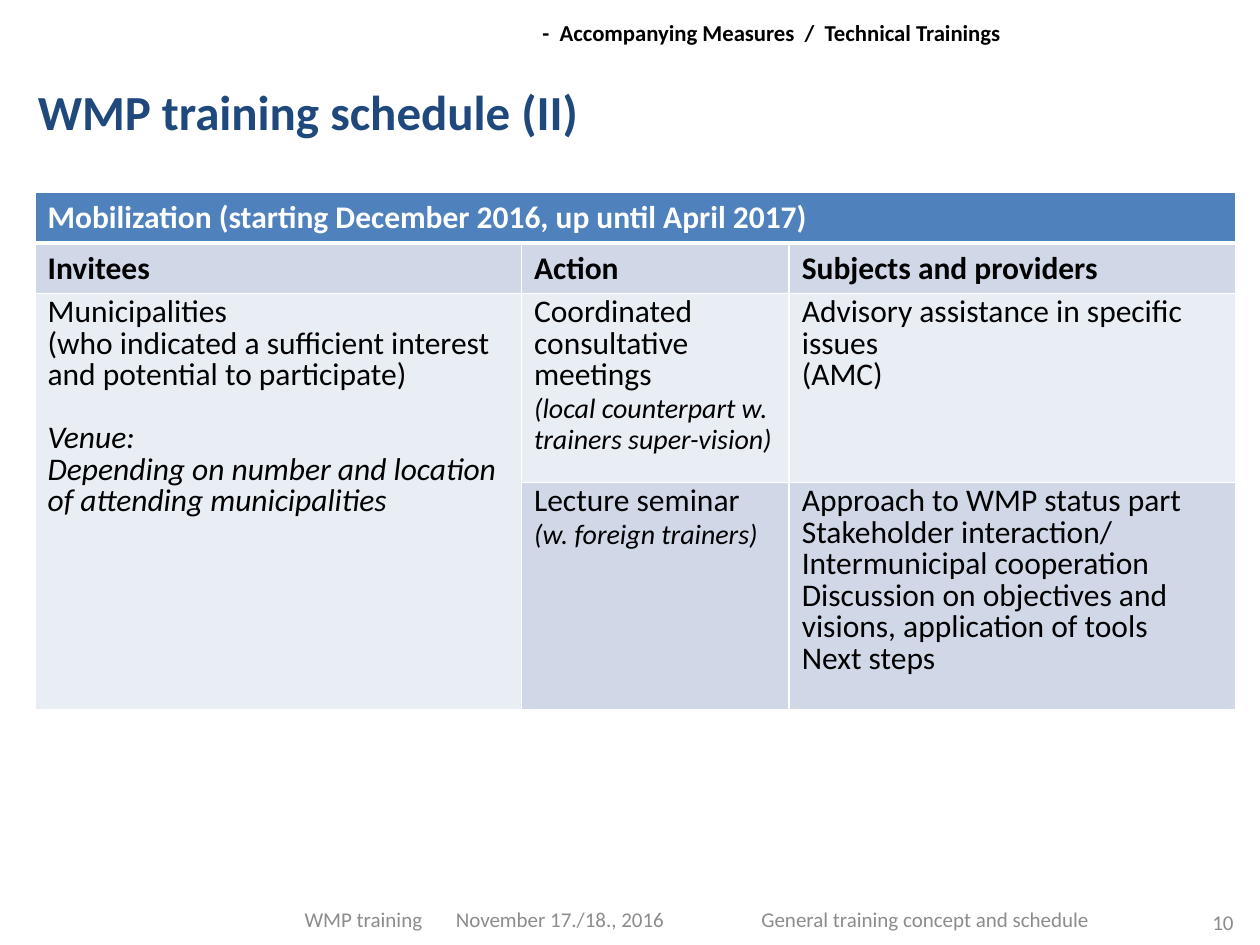
import pptx
import pptx.dml.color
import pptx.enum.shapes
import pptx.enum.text
import pptx.oxml
import pptx.oxml.ns
import pptx.util

Pt = pptx.util.Pt
RGBColor = pptx.dml.color.RGBColor
Align = pptx.enum.text.PP_ALIGN
Anchor = pptx.enum.text.MSO_ANCHOR

WHITE = RGBColor(0xFF, 0xFF, 0xFF)
BLACK = RGBColor(0x00, 0x00, 0x00)
GREY = RGBColor(0x8C, 0x8C, 0x8C)
NAVY = RGBColor(0x1F, 0x49, 0x7D)
BLUE = RGBColor(0x4F, 0x81, 0xBD)
BAND_DARK = RGBColor(0xD0, 0xD8, 0xE8)
BAND_LIGHT = RGBColor(0xE9, 0xED, 0xF4)

COLUMN_WIDTHS = (278, 153, 255)
ROW_HEIGHTS = (27.4, 27.4, 108, 130)
HEADINGS = ("Invitees", "Action", "Subjects and providers")


class SlideBuilder:
    font = "Calibri"
    body_size = 18
    line_pitch = Pt(18)

    def __init__(self, slide):
        self.slide = slide

    def add_run(self, paragraph, text, size, color=BLACK, bold=False, italic=False):
        """Add text as one run per line, with line breaks between."""
        for number, line in enumerate(text.split("\n")):
            if number:
                paragraph.add_line_break()
            run = paragraph.add_run()
            run.text = line
            run.font.name = self.font
            run.font.size = Pt(size)
            run.font.bold = bold
            run.font.italic = italic
            run.font.color.rgb = color

    def title(self, text, left, top, width, height):
        heading = self.slide.shapes.title
        heading.left, heading.top = Pt(left), Pt(top)
        heading.width, heading.height = Pt(width), Pt(height)
        frame = heading.text_frame
        frame.auto_size = pptx.enum.text.MSO_AUTO_SIZE.NONE
        frame.vertical_anchor = Anchor.TOP
        frame.paragraphs[0].alignment = Align.LEFT
        self.add_run(frame.paragraphs[0], text, 28, NAVY, bold=True)

    def banner(self, text, left, top, width, height):
        strip = self.slide.shapes.add_shape(
            pptx.enum.shapes.MSO_SHAPE.RECTANGLE,
            Pt(left), Pt(top), Pt(width), Pt(height))
        strip.shadow.inherit = False
        strip.fill.solid()
        strip.fill.fore_color.rgb = WHITE
        strip.line.fill.background()
        frame = strip.text_frame
        frame.word_wrap = True
        frame.vertical_anchor = Anchor.TOP
        frame.margin_left = Pt(6)
        frame.margin_right = frame.margin_top = frame.margin_bottom = Pt(3)
        frame.paragraphs[0].alignment = Align.LEFT
        self.add_run(frame.paragraphs[0], text, 13, bold=True)

    def footer(self, text, left, top, width, align=Align.LEFT, tab=None):
        box = self.slide.shapes.add_textbox(Pt(left), Pt(top), Pt(width), Pt(28.8))
        frame = box.text_frame
        frame.word_wrap = True
        frame.vertical_anchor = Anchor.MIDDLE
        paragraph = frame.paragraphs[0]
        paragraph.alignment = align
        if tab:
            paragraph._p.get_or_add_pPr().append(pptx.oxml.parse_xml(
                f'<a:tabLst {pptx.oxml.ns.nsdecls("a")}>'
                f'<a:tab pos="{int(Pt(tab))}" algn="l"/></a:tabLst>'))
        self.add_run(paragraph, text, 12, GREY)

    def table(self, left, top, widths, heights):
        grid = self.slide.shapes.add_table(
            len(heights), len(widths), Pt(left), Pt(top),
            Pt(sum(widths)), Pt(sum(heights))).table
        for column, width in zip(grid.columns, widths):
            column.width = Pt(width)
        for row, height in zip(grid.rows, heights):
            row.height = Pt(height)
        return grid

    def cell_style(self, cell, fill, top=1, bottom=1):
        properties = cell._tc.get_or_add_tcPr()
        for side, weight in (("L", 1), ("R", 1), ("T", top), ("B", bottom)):
            properties.append(pptx.oxml.parse_xml(
                f'<a:ln{side} {pptx.oxml.ns.nsdecls("a")} w="{int(Pt(weight))}">'
                f'<a:solidFill><a:srgbClr val="{WHITE}"/></a:solidFill></a:ln{side}>'))
        cell.fill.solid()
        cell.fill.fore_color.rgb = fill

    def heading_cell(self, cell, text, color=BLACK):
        self.add_run(cell.text_frame.paragraphs[0], text, self.body_size, color, bold=True)

    def body_cell(self, cell, *paragraphs, gap_before=None):
        """Fill a cell; a paragraph is a list of (text, size, italic) runs.

        gap_before is the number of the paragraph that follows one line of space.
        """
        frame = cell.text_frame
        for number, runs in enumerate(paragraphs):
            paragraph = frame.add_paragraph() if number else frame.paragraphs[0]
            paragraph.line_spacing = self.line_pitch
            if number and number == gap_before:
                paragraph.space_before = self.line_pitch
            for text, size, italic in runs:
                self.add_run(paragraph, text, size, italic=italic)


def plain(text):
    return (text, 18, False)


def aside(text, size=16):
    return (text, size, True)


def add_schedule(builder):
    schedule = builder.table(20, 110, COLUMN_WIDTHS, ROW_HEIGHTS)
    row_fills = (BLUE, BAND_DARK, BAND_LIGHT, BAND_DARK)
    for row, fill in enumerate(row_fills):
        for column in range(len(COLUMN_WIDTHS)):
            in_invitees = column == 0 and row > 1
            builder.cell_style(schedule.cell(row, column),
                               BAND_LIGHT if in_invitees else fill,
                               top=3 if row == 1 else 1,
                               bottom=3 if row == 0 else 1)
    schedule.cell(0, 0).merge(schedule.cell(0, 2))
    schedule.cell(2, 0).merge(schedule.cell(3, 0))

    builder.heading_cell(schedule.cell(0, 0),
                         "Mobilization (starting December 2016, up until April 2017)", WHITE)
    for column, heading in enumerate(HEADINGS):
        builder.heading_cell(schedule.cell(1, column), heading)

    builder.body_cell(
        schedule.cell(2, 0),
        [plain("Municipalities\n(who indicated a sufficient interest and potential to participate)")],
        [aside("Venue:\nDepending on number and location of attending municipalities", 18)],
        gap_before=1)
    builder.body_cell(
        schedule.cell(2, 1),
        [plain("Coordinated consultative meetings\n"),
         aside("(local counterpart w. trainers super-vision)")])
    builder.body_cell(
        schedule.cell(2, 2),
        [plain("Advisory assistance in specific issues")],
        [plain("(AMC)")])
    builder.body_cell(
        schedule.cell(3, 1),
        [plain("Lecture seminar")],
        [aside("(w. foreign trainers)")])
    builder.body_cell(
        schedule.cell(3, 2),
        [plain("Approach to WMP status part")],
        [plain("Stakeholder interaction/")],
        [plain("Intermunicipal cooperation")],
        [plain("Discussion on objectives and visions, application of tools")],
        [plain("Next steps")])


def main():
    presentation = pptx.Presentation()
    presentation.slide_width, presentation.slide_height = Pt(720), Pt(540)
    title_only = presentation.slide_layouts[5]
    builder = SlideBuilder(presentation.slides.add_slide(title_only))

    builder.banner("-  Accompanying Measures  /  Technical Trainings", 304, 8, 286.5, 22)
    builder.footer("General training concept and schedule", 428, 511, 238)
    builder.footer("WMP training\tNovember 17./18., 2016", 167, 511, 221, tab=86.4)
    builder.footer("10", 649, 512.6, 63, align=Align.RIGHT)
    add_schedule(builder)
    builder.title("WMP training schedule (II)", 14.4, 43.2, 698, 38)

    presentation.save("out.pptx")


if __name__ == "__main__":
    main()
